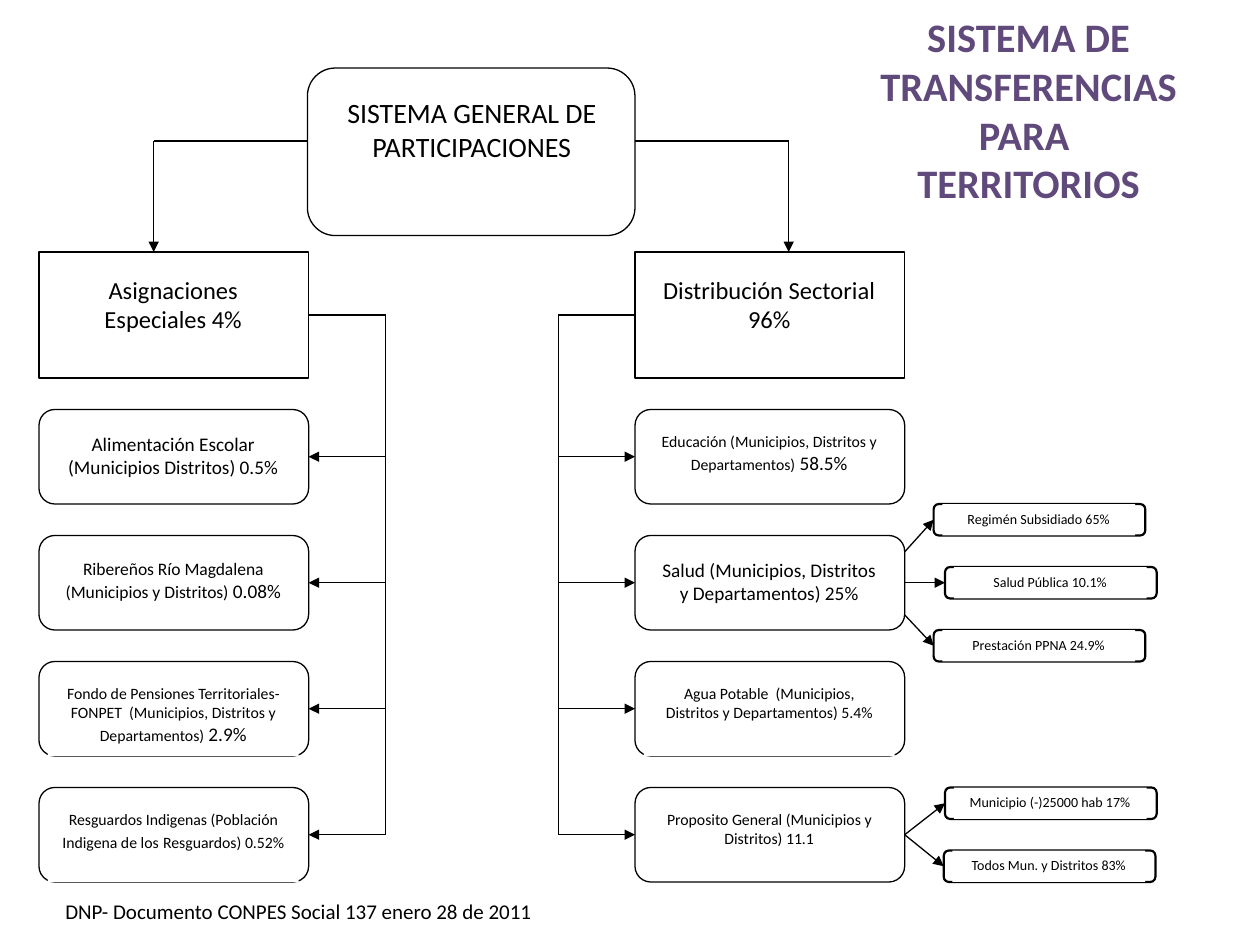
from pptx import Presentation
from pptx.dml.color import RGBColor
from pptx.enum.shapes import MSO_CONNECTOR as LINE, MSO_SHAPE as SHAPE
from pptx.enum.text import MSO_ANCHOR as ANCHOR, PP_ALIGN as ALIGN
from pptx.oxml.ns import qn
from pptx.util import Inches, Pt
from lxml.etree import SubElement

THEME = {
    "font": "Calibri", "ink": RGBColor(0, 0, 0), "paper": RGBColor(255, 255, 255),
    "accent": RGBColor(0x60, 0x4A, 0x7B), "thin": 0.75, "thick": 1.25,
    "title": 23.1, "root": 16, "heading": 14, "large": 11, "medium": 10,
    "small": 9, "detail": 8, "source": 12,
}

TITLE = [[("SISTEMA DE TRANSFERENCIAS PARA ", "title")], [("TERRITORIOS", "title")]]
ROOT = [("SISTEMA GENERAL DE PARTICIPACIONES", "root")]
SOURCE = [("DNP- Documento CONPES Social 137 enero 28 de 2011", "source")]

BRANCHES = [
    {
        "left": 0.31, "trunk": 3.06, "drop": 1.22, "root_edge": 2.44, "inner_side": 3,
        "heading": [("Asignaciones Especiales 4%", "heading")],
        "items": [
            ([("Alimentación Escolar (Municipios Distritos) 0.5%", "large")], 0.5),
            ([("Ribereños Río Magdalena (Municipios y Distritos)", "medium"),
              (" 0.08%", "large")], 0.5),
            ([("Fondo de Pensiones Territoriales- FONPET  (Municipios, Distritos y "
               "Departamentos)", "small"), (" 2.9%", "large")], 0.62),
            ([("Resguardos Indigenas (Población Indigena de los", "small"),
              (" ", "large"), ("Resguardos) 0.52%", "small")], 0.62),
        ],
    },
    {
        "left": 5.04, "trunk": 4.43, "drop": 6.26, "root_edge": 5.04, "inner_side": 1,
        "heading": [("Distribución Sectorial 96%", "heading")],
        "items": [
            ([("Educación (Municipios, Distritos y Departamentos)", "small"),
              (" 58.5%", "large")], 0.5),
            ([("Salud (Municipios, Distritos y Departamentos) 25%", "large")], 0.5),
            ([("Agua Potable  (Municipios, Distritos y Departamentos) 5.4%", "small")], 0.62),
            ([("Proposito General (Municipios y Distritos) 11.1", "small")], 0.5),
        ],
    },
]

SALUD, PROPOSITO = 1, 3
DETAILS = [
    ("Regimén Subsidiado 65%", 7.41, 4, SALUD, 4.38),
    ("Salud Pública 10.1%", 7.5, 4.5, SALUD, None),
    ("Prestación PPNA 24.9%", 7.41, 5, SALUD, 4.88),
    ("Municipio (-)25000 hab 17%", 7.5, 6.25, PROPOSITO, None),
    ("Todos Mun. y Distritos 83%", 7.49, 6.75, PROPOSITO, None),
]

BOX_WIDTH, ITEM_HEIGHT = 2.14, 0.75
HEADING_TOP, HEADING_MIDDLE = 2, 2.5
ITEM_TOP, ITEM_STEP = 3.25, 1
LABEL_INSET, LABEL_DROP, LABEL_WIDTH = 0.07, 0.13, 1.99
DETAIL_SIZE, DETAIL_LABEL_WIDTH = (1.68, 0.25), 1.53
ROOT_EXIT = 1.12

deck = Presentation()
deck.slide_width, deck.slide_height = Inches(10), Inches(7.5)
slide = deck.slides.add_slide(deck.slide_layouts[6])


def write(holder, paragraphs, align=ALIGN.CENTER, anchor=ANCHOR.TOP, color="ink", bold=False):
    frame = holder.text_frame
    frame.word_wrap, frame.vertical_anchor = True, anchor
    for index, runs in enumerate(paragraphs):
        paragraph = frame.add_paragraph() if index else frame.paragraphs[0]
        paragraph.alignment = align
        for text, size in runs:
            run = paragraph.add_run()
            run.text = text
            run.font.color.rgb = THEME[color]
            style = {"name": THEME["font"], "size": Pt(THEME[size]), "bold": bold}
            for key, value in style.items():
                setattr(run.font, key, value)


def add_box(kind, left, top, width, height, weight="thin"):
    box = slide.shapes.add_shape(kind, *map(Inches, (left, top, width, height)))
    box.shadow.inherit = False
    box.fill.solid()
    box.fill.fore_color.rgb = THEME["paper"]
    if weight:
        box.line.color.rgb = THEME["ink"]
        box.line.width = Pt(THEME[weight])
    else:
        box.line.fill.background()
    return box


def add_label(runs, left, top, width, height):
    write(add_box(SHAPE.RECTANGLE, left, top, width, height, None), [runs])


def add_text(paragraphs, left, top, width, height, **style):
    holder = slide.shapes.add_textbox(*map(Inches, (left, top, width, height)))
    write(holder, paragraphs, **style)


def connect(start, end, arrow=False):
    points = [(0, 0) if hasattr(place[0], "shape_id") else place for place in (start, end)]
    link = slide.shapes.add_connector(
        LINE.STRAIGHT, *(Inches(value) for point in points for value in point))
    for place, join in ((start, link.begin_connect), (end, link.end_connect)):
        if hasattr(place[0], "shape_id"):
            join(*place)
    link.line.color.rgb = THEME["ink"]
    link.line.width = Pt(THEME["thin"])
    if arrow:
        SubElement(link.line._get_or_add_ln(), qn("a:tailEnd"), type="triangle")
    SubElement(link._element.spPr, qn("a:effectLst"))


add_box(SHAPE.ROUNDED_RECTANGLE, 2.44, 0.54, 2.6, 1.33)
add_label(ROOT, 2.6, 0.71, 2.29, 0.88)

for branch in BRANCHES:
    left, trunk, side = branch["left"], branch["trunk"], branch["inner_side"]
    label_left = left + LABEL_INSET
    heading_box = add_box(SHAPE.RECTANGLE, left, HEADING_TOP, BOX_WIDTH, 1)
    add_label(branch["heading"], label_left, HEADING_TOP + LABEL_DROP, LABEL_WIDTH, 0.62)
    connect((branch["root_edge"], ROOT_EXIT), (branch["drop"], ROOT_EXIT))
    connect((branch["drop"], ROOT_EXIT), (branch["drop"], HEADING_TOP), arrow=True)
    connect((heading_box, side), (trunk, HEADING_MIDDLE))

    item_boxes = []
    for row, (runs, label_height) in enumerate(branch["items"]):
        top = ITEM_TOP + row * ITEM_STEP
        item_box = add_box(SHAPE.ROUNDED_RECTANGLE, left, top, BOX_WIDTH, ITEM_HEIGHT)
        add_label(runs, label_left, top + LABEL_DROP, LABEL_WIDTH, label_height)
        middle = top + ITEM_HEIGHT / 2
        connect((trunk, middle), (item_box, side), arrow=True)
        item_boxes.append(item_box)
    connect((trunk, HEADING_MIDDLE), (trunk, middle))

sector_boxes, sector_edge = item_boxes, left + BOX_WIDTH
for text, left, top, sector, exit_height in DETAILS:
    detail_box = add_box(SHAPE.ROUNDED_RECTANGLE, left, top, *DETAIL_SIZE, "thick")
    start = (sector_edge, exit_height) if exit_height else (sector_boxes[sector], 3)
    connect(start, (detail_box, 1), arrow=True)
    add_label([(text, "detail")], left + LABEL_INSET, top, DETAIL_LABEL_WIDTH, DETAIL_SIZE[1])

add_text([SOURCE], 0.42, 7.08, 7.83, 0.3, align=ALIGN.LEFT)
add_text(TITLE, 6.68, 0.12, 2.97, 1.5, anchor=ANCHOR.MIDDLE, color="accent", bold=True)

deck.save("out.pptx")
